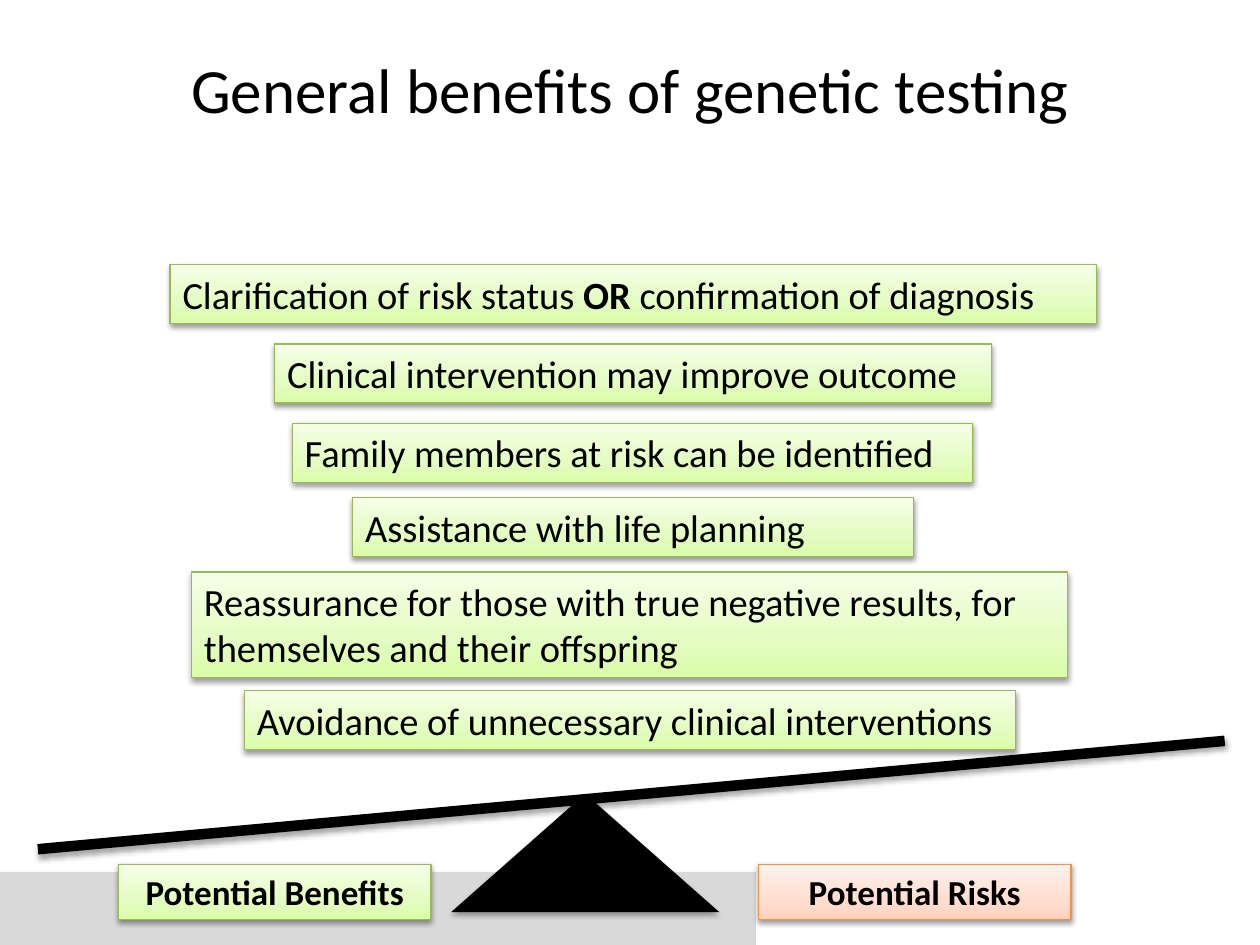
from copy import deepcopy

from lxml import etree
from pptx import Presentation
from pptx import util as u
from pptx.dml.color import RGBColor
from pptx.enum import shapes, text
from pptx.oxml.ns import qn

GREEN = ("DAFDA7", "E4FCC2", "F5FFE7", "98B955")
ORANGE = ("FFD2BD", "FFDED0", "FFF2ED", "F69240")


def color(value):
    return RGBColor.from_string(value)


def add_shadow(shape, distance, opacity):
    effects = etree.SubElement(shape._element.spPr, qn("a:effectLst"))
    shadow = etree.SubElement(effects, qn("a:outerShdw"), blurRad=str(u.Pt(3.1)),
                              dist=str(u.Pt(distance)), dir="5400000", rotWithShape="0")
    shade = etree.SubElement(shadow, qn("a:srgbClr"), val="000000")
    etree.SubElement(shade, qn("a:alpha"), val=str(opacity * 1000))


deck = Presentation()
deck.slide_width, deck.slide_height = u.Inches(10), u.Inches(7.5)
page = deck.slides.add_slide(deck.slide_layouts[5])

title = page.shapes.title
title.left, title.top = u.Inches(0.5), u.Inches(0.08)
title.width, title.height = u.Inches(9), u.Inches(1.25)
title.text_frame.text = "General benefits of genetic testing"
title.text_frame.vertical_anchor = text.MSO_ANCHOR.MIDDLE
heading = title.text_frame.paragraphs[0]
heading.alignment = text.PP_ALIGN.CENTER
heading.runs[0].font.name = "Calibri"
heading.runs[0].font.size = u.Pt(36)
heading.runs[0].font.color.rgb = color("000000")

band = page.shapes.add_shape(shapes.MSO_SHAPE.RECTANGLE, u.Inches(0), u.Inches(6.92),
                             u.Inches(6), u.Inches(0.58))
band.shadow.inherit = False
band.fill.solid()
band.fill.fore_color.rgb = color("D9D9D9")
band.line.fill.background()

pivot = page.shapes.add_shape(shapes.MSO_SHAPE.ISOSCELES_TRIANGLE, u.Inches(3.58), u.Inches(6.3),
                              u.Inches(2.13), u.Inches(0.94))
pivot.fill.solid()
pivot.fill.fore_color.rgb = color("000000")
pivot.line.fill.background()
add_shadow(pivot, 1.8, 35)

beam = page.shapes.add_connector(shapes.MSO_CONNECTOR.STRAIGHT, u.Inches(0.3), u.Inches(6.74),
                                 u.Inches(9.72), u.Inches(5.88))
beam.line.color.rgb = color("000000")
beam.line.width = u.Pt(6)
add_shadow(beam, 1.8, 35)

LEFT, CENTER = text.PP_ALIGN.LEFT, text.PP_ALIGN.CENTER
boxes = [
    (1.35, 2.1, 7.35, 0.47, ["Clarification of risk status ", "OR", " confirmation of diagnosis"],
     GREEN, 22, LEFT),
    (2.18, 2.73, 5.69, 0.47, ["Clinical intervention may improve outcome"], GREEN, 22, LEFT),
    (2.32, 3.36, 5.4, 0.47, ["Family members at risk can be identified"], GREEN, 22, LEFT),
    (2.8, 3.95, 4.45, 0.47, ["Assistance with life planning"], GREEN, 22, LEFT),
    (1.52, 4.54, 6.95, 0.84,
     ["Reassurance for those with true negative results, for themselves and their offspring"],
     GREEN, 22, LEFT),
    (1.94, 5.48, 6.12, 0.47, ["Avoidance of unnecessary clinical interventions"], GREEN, 22, LEFT),
    (0.94, 6.86, 2.48, 0.44, ["Potential Benefits"], GREEN, 20, CENTER),
    (6.02, 6.86, 2.48, 0.44, ["Potential Risks"], ORANGE, 20, CENTER),
]
for left, top, width, height, parts, palette, size, alignment in boxes:
    box = page.shapes.add_shape(shapes.MSO_SHAPE.RECTANGLE, u.Inches(left), u.Inches(top),
                                u.Inches(width), u.Inches(height))
    box.fill.gradient()
    box.fill.gradient_angle = 90
    stop_list = box._element.spPr.find(".//" + qn("a:gsLst"))
    stop_list.append(deepcopy(stop_list[0]))
    for stop, position, value in zip(box.fill.gradient_stops, (0, 0.35, 1), palette):
        stop.position = position
        stop.color.rgb = color(value)
    box.line.color.rgb = color(palette[3])
    box.line.width = u.Pt(0.75)
    add_shadow(box, 1.6, 38)

    frame = box.text_frame
    frame.word_wrap = True
    frame.auto_size = text.MSO_AUTO_SIZE.SHAPE_TO_FIT_TEXT
    frame.vertical_anchor = text.MSO_ANCHOR.TOP
    para = frame.paragraphs[0]
    para.alignment = alignment
    for part in parts:
        span = para.add_run()
        span.text = part
        span.font.name = "Calibri"
        span.font.size = u.Pt(size)
        span.font.bold = part == "OR" or alignment == CENTER
        span.font.color.rgb = color("000000")

deck.save("out.pptx")
